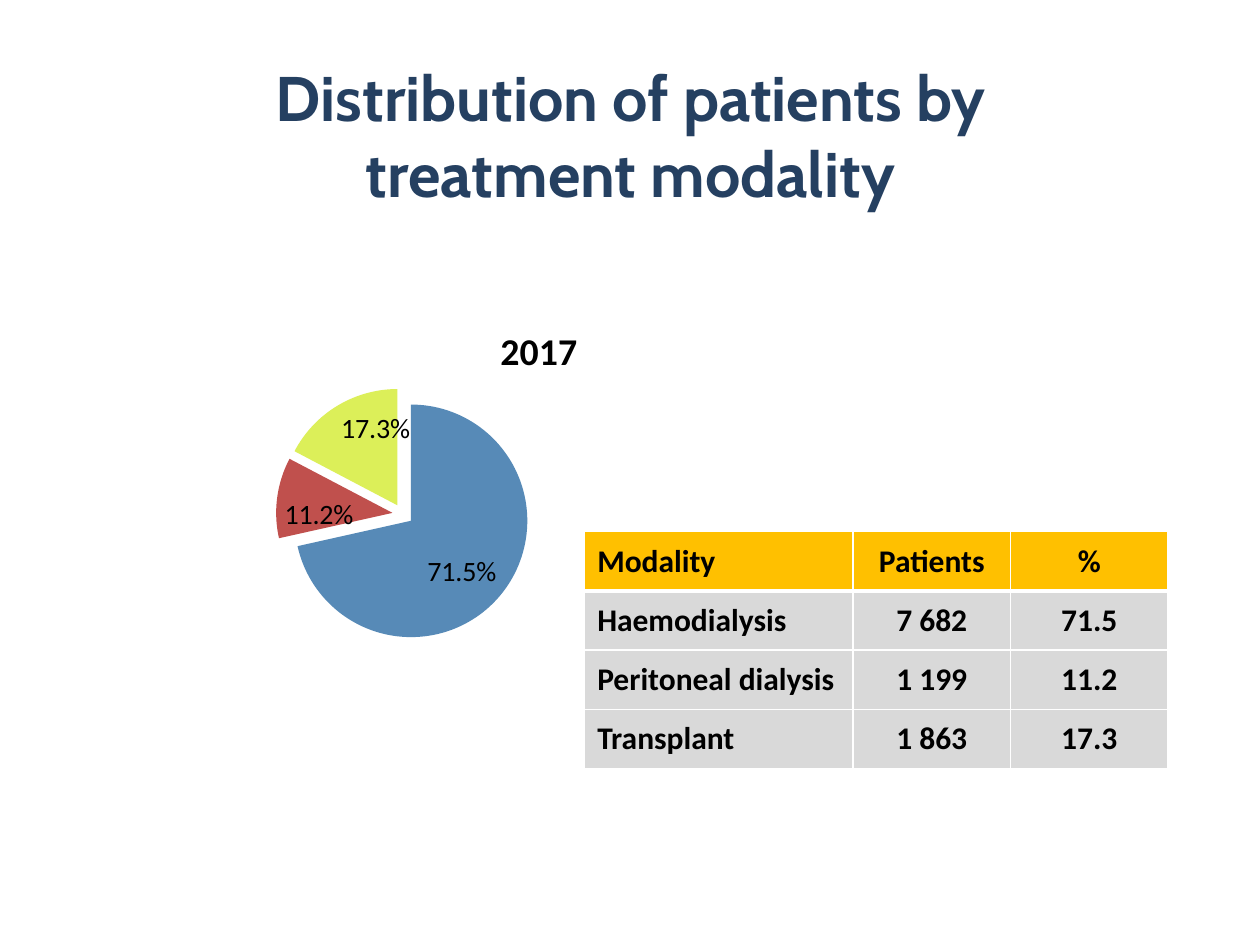
"""Build a slide showing the distribution of patients by treatment modality."""
import pptx
import pptx.chart.data
import pptx.dml.color
import pptx.enum.chart
import pptx.enum.text
import pptx.oxml
import pptx.oxml.ns
import pptx.util
from pptx.util import Inches

NS = pptx.oxml.ns.nsdecls("a", "c")


def rgb(value):
    return pptx.dml.color.RGBColor.from_string(value)


class Deck:
    title_font, body_font = "Cabin", "Calibri"
    navy, black, white = "254061", "000000", "FFFFFF"
    header_fill, body_fill = "FFC000", "D9D9D9"
    slices = ["578AB7", "C0504D", "DCEF59"]

    def __init__(self, width, height):
        self.prs = pptx.Presentation()
        self.prs.slide_width, self.prs.slide_height = Inches(width), Inches(height)
        self.s = self.prs.slides.add_slide(self.prs.slide_layouts[5])

    def font(self, f, name, size, color, bold=False):
        f.name, f.size, f.bold = name, pptx.util.Pt(size), bold
        f.color.rgb = rgb(color)

    def title(self, text, x, y, w, h):
        sp = self.s.shapes.title
        sp.left, sp.top, sp.width, sp.height = map(Inches, (x, y, w, h))
        tf = sp.text_frame
        tf.text = text
        tf.word_wrap = True
        tf.auto_size = pptx.enum.text.MSO_AUTO_SIZE.NONE
        tf.vertical_anchor = pptx.enum.text.MSO_ANCHOR.MIDDLE
        p = tf.paragraphs[0]
        p.alignment = pptx.enum.text.PP_ALIGN.CENTER
        self.font(p.runs[0].font, self.title_font, 36, self.navy, True)

    def borders(self, cell, widths):
        tc_pr = cell._tc.get_or_add_tcPr()
        for i, (side, pt) in enumerate(widths.items()):
            tc_pr.insert(i, pptx.oxml.parse_xml(
                f'<a:{side} {NS} w="{pptx.util.Pt(pt)}"><a:solidFill>'
                f'<a:srgbClr val="{self.white}"/></a:solidFill></a:{side}>'))

    def table(self, rows, x, y, col_widths, row_height):
        tbl = self.s.shapes.add_table(
            len(rows), len(col_widths), Inches(x), Inches(y),
            Inches(sum(col_widths)), Inches(row_height * len(rows))).table
        for col, w in zip(tbl.columns, col_widths):
            col.width = Inches(w)
        for i, row in enumerate(rows):
            tbl.rows[i].height = Inches(row_height)
            for j, text in enumerate(row):
                cell = tbl.cell(i, j)
                cell.text = text
                cell.vertical_anchor = pptx.enum.text.MSO_ANCHOR.MIDDLE
                cell.fill.solid()
                cell.fill.fore_color.rgb = rgb(self.body_fill if i else self.header_fill)
                p = cell.text_frame.paragraphs[0]
                align = pptx.enum.text.PP_ALIGN
                p.alignment = align.CENTER if j else align.LEFT
                self.font(p.runs[0].font, self.body_font, 18, self.black, True)
                self.borders(cell, {"lnL": 1, "lnR": 1, "lnT": 3 if i == 1 else 1,
                                    "lnB": 1 if i else 3})

    def layout(self, **values):
        inner = '<c:layoutTarget val="inner"/>' if "w" in values else ""
        modes = "".join(f'<c:{k}Mode val="edge"/>' for k in values if k in "xy")
        sizes = "".join(f'<c:{k} val="{v}"/>' for k, v in values.items())
        return pptx.oxml.parse_xml(
            f"<c:layout {NS}><c:manualLayout>{inner}{modes}{sizes}"
            "</c:manualLayout></c:layout>")

    def pie(self, title, values, x, y, w, h, explosion):
        data = pptx.chart.data.CategoryChartData(number_format="0.0")
        data.categories = [str(i + 1) for i in range(len(values))]
        data.add_series("Series 1", values)
        chart = self.s.shapes.add_chart(
            pptx.enum.chart.XL_CHART_TYPE.PIE, *map(Inches, (x, y, w, h)), data).chart
        self.font(chart.font, self.body_font, 18, self.black)
        chart.has_legend = False
        chart.has_title = True
        tf = chart.chart_title.text_frame
        tf.text = title
        self.font(tf.paragraphs[0].runs[0].font, self.body_font, 21.6, self.black, True)
        title_xml = chart.chart_title._element
        for old in title_xml.findall(pptx.oxml.ns.qn("c:layout")):
            title_xml.remove(old)
        title_xml.find(pptx.oxml.ns.qn("c:tx")).addnext(self.layout(x=0.66, y=0.15))
        plot = chart.plots[0]
        plot.vary_by_categories = True
        area = plot._element.getparent()
        for old in area.findall(pptx.oxml.ns.qn("c:layout")):
            area.remove(old)
        area.insert(0, self.layout(x=0.3, y=0.32, w=0.42, h=0.61))
        series = plot.series[0]
        for i, color in enumerate(self.slices):
            fmt = series.points[i].format
            fmt.fill.solid()
            fmt.fill.fore_color.rgb = rgb(color)
            fmt.line.fill.background()
        series._element.find(pptx.oxml.ns.qn("c:dPt")).addprevious(
            pptx.oxml.parse_xml(f'<c:explosion {NS} val="{explosion}"/>'))
        labels = series.data_labels
        labels.show_value = True
        labels.show_percentage = False
        labels.number_format = '0.0"%"'
        labels.number_format_is_linked = False
        labels.position = pptx.enum.chart.XL_LABEL_POSITION.INSIDE_END
        self.font(labels.font, self.body_font, 16, self.black)


def main():
    deck = Deck(10, 7.5)
    deck.title("Distribution of patients by treatment modality", 1.06, 0.44, 7.89, 1.25)
    deck.table([
        ["Modality", "Patients", "%"],
        ["Haemodialysis", "7 682", "71.5"],
        ["Peritoneal dialysis", "1 199", "11.2"],
        ["Transplant", "1 863", "17.3"],
    ], 4.64, 4.22, [2.13, 1.25, 1.25], 0.47)
    deck.pie("2017", [71.5, 11.2, 17.3], 0.75, 2.02, 4.8, 3.3, 9)
    deck.prs.save("out.pptx")


if __name__ == "__main__":
    main()
